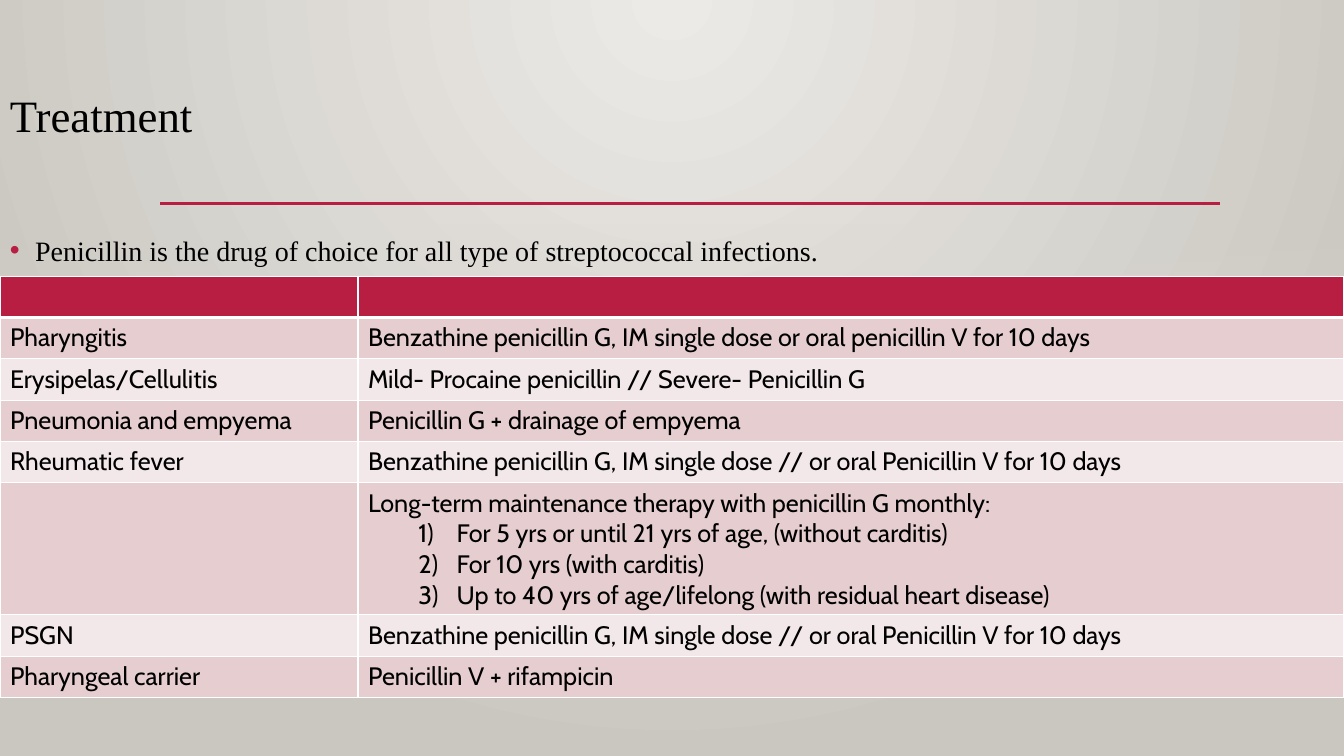
from lxml import etree
from pptx import Presentation, util as u
from pptx.dml.color import RGBColor
from pptx.enum import shapes, text
from pptx.oxml import ns

C = {"crimson": "B71E42", "rose": "E6CDCF", "pale": "F3E8E9", "black": "000000",
     "white": "FFFFFF", "panel": "DFDBD5", "glow": "ECEAE7", "edge": "CAC7C1"}
rgb = {k: RGBColor.from_string(v) for k, v in C.items()}


def add_xml(parent, tag, **attrs):
    return etree.SubElement(parent, ns.qn(tag), {k: str(v) for k, v in attrs.items()})


def write(p, words, **fmt):
    r = p.add_run()
    r.text = words
    r.font.color.rgb = rgb["black"]
    for k, v in fmt.items():
        setattr(r.font, k, v)


prs = Presentation()
prs.slide_width, prs.slide_height = u.Inches(13.33), u.Inches(7.5)
W = prs.slide_width
s = prs.slides.add_slide(prs.slide_layouts[6])

# Background: circular glow from the top centre
fill = s.background.fill
fill.gradient()
for stop, name in zip(fill.gradient_stops, ("glow", "edge")):
    stop.color.rgb = rgb[name]
lin = s._element.find(".//" + ns.qn("a:lin"))
grad = lin.getparent()
grad.remove(lin)
circle = add_xml(grad, "a:path", path="circle")
add_xml(circle, "a:fillToRect", l=43000, t=0, r=43000, b=100000)

# Panel that fades in downwards
sp = s.shapes.add_shape(shapes.MSO_SHAPE.RECTANGLE, 0, u.Inches(2.21), W, u.Inches(4.49))
sp.shadow.inherit = False
sp.line.fill.background()
sp.fill.gradient()
sp.fill.gradient_angle = 270
for stop in sp.fill.gradient_stops:
    stop.color.rgb = rgb["panel"]
add_xml(sp._element.find(".//" + ns.qn("a:srgbClr")), "a:alpha", val=0)

# Rule under the title
rule = s.shapes.add_connector(shapes.MSO_CONNECTOR.STRAIGHT, u.Inches(1.59), u.Inches(2.02),
                              u.Inches(12.1), u.Inches(2.02))
rule.line.color.rgb = rgb["crimson"]
rule.line.width = u.Pt(2.5)
add_xml(rule._element.spPr, "a:effectLst")

# Title and lead bullet
boxes = [("Treatment", 0.88, 1.15, 32, 0.9),
         ("Penicillin is the drug of choice for all type of streptococcal infections.",
          2.2, 0.5, 20, 1.2)]
for words, top, height, size, spacing in boxes:
    tf = s.shapes.add_textbox(0, u.Inches(top), W, u.Inches(height)).text_frame
    tf.word_wrap = True
    tf.vertical_anchor = text.MSO_ANCHOR.TOP
    p = tf.paragraphs[0]
    p.line_spacing = spacing
    write(p, words, name="Times New Roman", size=u.Pt(size))
pPr = p._p.get_or_add_pPr()
pPr.set("marL", str(u.Inches(0.25)))
pPr.set("indent", str(u.Inches(-0.25)))
add_xml(add_xml(pPr, "a:buClr"), "a:srgbClr", val=C["crimson"])
add_xml(pPr, "a:buFont", typeface="Arial")
add_xml(pPr, "a:buChar", char="•")

# Treatment table: the first line of a cell is plain, the others are numbered
rows = [
    ("", ""),
    ("Pharyngitis", "Benzathine penicillin G, IM single dose or oral penicillin V for 10 days"),
    ("Erysipelas/Cellulitis", "Mild- Procaine penicillin // Severe- Penicillin G"),
    ("Pneumonia and empyema", "Penicillin G + drainage of empyema"),
    ("Rheumatic fever",
     "Benzathine penicillin G, IM single dose // or oral Penicillin V for 10 days"),
    ("", "Long-term maintenance therapy with penicillin G monthly:\n"
         "For 5 yrs or until 21 yrs of age, (without carditis)\n"
         "For 10 yrs (with carditis)\n"
         "Up to 40 yrs of age/lifelong (with residual heart disease)"),
    ("PSGN", "Benzathine penicillin G, IM single dose // or oral Penicillin V for 10 days"),
    ("Pharyngeal carrier", "Penicillin V + rifampicin"),
]
ROW, LINE = 0.41, 0.3
tbl = s.shapes.add_table(len(rows), 2, 0, u.Inches(2.74), W, u.Inches(ROW * len(rows))).table
tbl.columns[0].width = u.Inches(3.55)
tbl.columns[1].width = W - u.Inches(3.55)
for i, row in enumerate(rows):
    tbl.rows[i].height = u.Inches(ROW + LINE * row[1].count("\n"))
    for j, words in enumerate(row):
        cell = tbl.cell(i, j)
        cell.fill.solid()
        cell.fill.fore_color.rgb = rgb["crimson" if i == 0 else "rose" if i % 2 else "pale"]
        tf = cell.text_frame
        for n, line in enumerate(words.split("\n") if words else []):
            p = tf.add_paragraph() if n else tf.paragraphs[0]
            if n:
                p.level = 1
                pPr = p._p.get_or_add_pPr()
                pPr.set("marL", str(u.Inches(0.88)))
                pPr.set("indent", str(u.Inches(-0.38)))
                add_xml(pPr, "a:buFont", typeface="+mj-lt")
                add_xml(pPr, "a:buAutoNum", type="arabicParenR")
            write(p, line, name="Cabin", size=u.Pt(18))
        # White borders, heavier below the header
        tcPr = cell._tc.get_or_add_tcPr()
        for k, side in enumerate("LRTB"):
            heavy = (i, side) in ((0, "B"), (1, "T"))
            ln = add_xml(tcPr, "a:ln" + side, w=u.Pt(3 if heavy else 1))
            add_xml(add_xml(ln, "a:solidFill"), "a:srgbClr", val=C["white"])
            tcPr.insert(k, ln)

prs.save("out.pptx")
